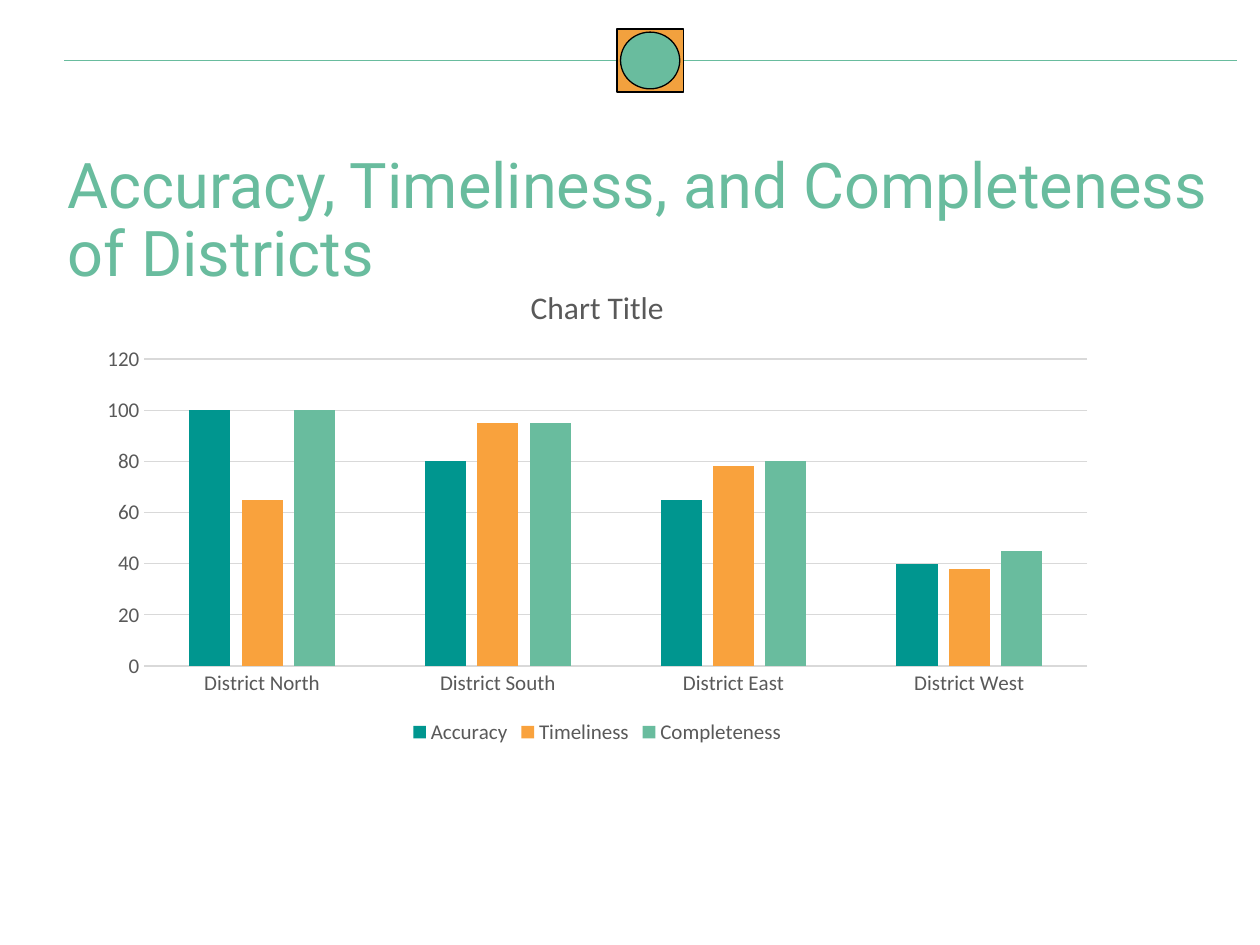
from dataclasses import dataclass

from lxml.etree import SubElement
from pptx import Presentation
from pptx.chart.data import CategoryChartData
from pptx.dml.color import RGBColor
from pptx.enum.chart import XL_CHART_TYPE, XL_LEGEND_POSITION, XL_TICK_MARK
from pptx.enum.shapes import MSO_CONNECTOR, MSO_SHAPE
from pptx.enum.text import MSO_ANCHOR
from pptx.oxml.ns import qn
from pptx.util import Inches, Pt


@dataclass(frozen=True)
class Theme:
    green: RGBColor = RGBColor(0x69, 0xBC, 0x9E)
    badge: RGBColor = RGBColor(0xF2, 0xA1, 0x3E)
    teal: RGBColor = RGBColor(0x00, 0x96, 0x8F)
    orange: RGBColor = RGBColor(0xF9, 0xA2, 0x3D)
    black: RGBColor = RGBColor(0, 0, 0)
    grey: RGBColor = RGBColor(0x59, 0x59, 0x59)
    grid: RGBColor = RGBColor(0xD9, 0xD9, 0xD9)
    head: Pt = Pt(36)
    title: Pt = Pt(18)
    label: Pt = Pt(12)
    thin: Pt = Pt(0.75)
    head_font: str = "Roboto"
    font: str = "Calibri"


theme = Theme()
deck = Presentation()
deck.slide_width, deck.slide_height = Inches(10), Inches(7.5)
slide = deck.slides.add_slide(deck.slide_layouts[6])
shapes = slide.shapes


def style(font, size, color, name=theme.font):
    font.size, font.name, font.bold = size, name, False
    font.color.rgb = color


def stroke(line, color, width=theme.thin):
    line.color.rgb = color
    line.width = width


# Header rule with its badge
mid = Inches(0.48)
rule = shapes.add_connector(MSO_CONNECTOR.STRAIGHT, Inches(0.51), mid, Inches(9.82), mid)
stroke(rule.line, theme.green)
SubElement(rule._element.spPr, qn("a:effectLst"))

for kind, wide, high, fill, width in (
    (MSO_SHAPE.RECTANGLE, 0.53, 0.5, theme.badge, Pt(1)),
    (MSO_SHAPE.OVAL, 0.47, 0.45, theme.green, theme.thin),
):
    wide, high = Inches(wide), Inches(high)
    left = Inches(5.16) - wide // 2
    badge = shapes.add_shape(kind, left, mid - high // 2, wide, high)
    badge.shadow.inherit = False
    badge.fill.solid()
    badge.fill.fore_color.rgb = fill
    stroke(badge.line, theme.black, width)

# Heading
box = shapes.add_textbox(Inches(0.44), Inches(1.17), Inches(9.25), Inches(0.92))
frame = box.text_frame
frame.word_wrap = True
frame.vertical_anchor = MSO_ANCHOR.TOP
frame.text = "Accuracy, Timeliness, and Completeness of Districts"
para = frame.paragraphs[0]
para.line_spacing = 0.9
para.space_before = Pt(10)
style(para.runs[0].font, theme.head, theme.green, theme.head_font)

# District chart
scores = (
    ("Accuracy", (100, 80, 65, 40), theme.teal),
    ("Timeliness", (65, 95, 78, 38), theme.orange),
    ("Completeness", (100, 95, 80, 45), theme.green),
)
data = CategoryChartData()
data.categories = [f"District {side}" for side in ("North", "South", "East", "West")]
for name, values, _ in scores:
    data.add_series(name, values)

chart = shapes.add_chart(
    XL_CHART_TYPE.COLUMN_CLUSTERED,
    Inches(0.69), Inches(2.09), Inches(8.1), Inches(3.86), data,
).chart
style(chart.font, Pt(10), theme.black)

chart.has_title = True
title = chart.chart_title.text_frame
title.text = "Chart Title"
style(title.paragraphs[0].runs[0].font, theme.title, theme.grey)
chart.chart_title.include_in_layout = False

chart.has_legend = True
chart.legend.position = XL_LEGEND_POSITION.BOTTOM
chart.legend.include_in_layout = False
style(chart.legend.font, theme.label, theme.grey)

plot = chart.plots[0]
plot.gap_width, plot.overlap = 219, -27
plot.vary_by_categories = False
for series, (_, _, color) in zip(plot.series, scores):
    series.format.fill.solid()
    series.format.fill.fore_color.rgb = color

for axis in (chart.category_axis, chart.value_axis):
    axis.major_tick_mark = axis.minor_tick_mark = XL_TICK_MARK.NONE
    style(axis.tick_labels.font, theme.label, theme.grey)
stroke(chart.category_axis.format.line, theme.grid)

scale = chart.value_axis
scale.minimum_scale, scale.maximum_scale, scale.major_unit = 0, 120, 20
scale.format.line.fill.background()
stroke(scale.major_gridlines.format.line, theme.grid)

deck.save("out.pptx")
